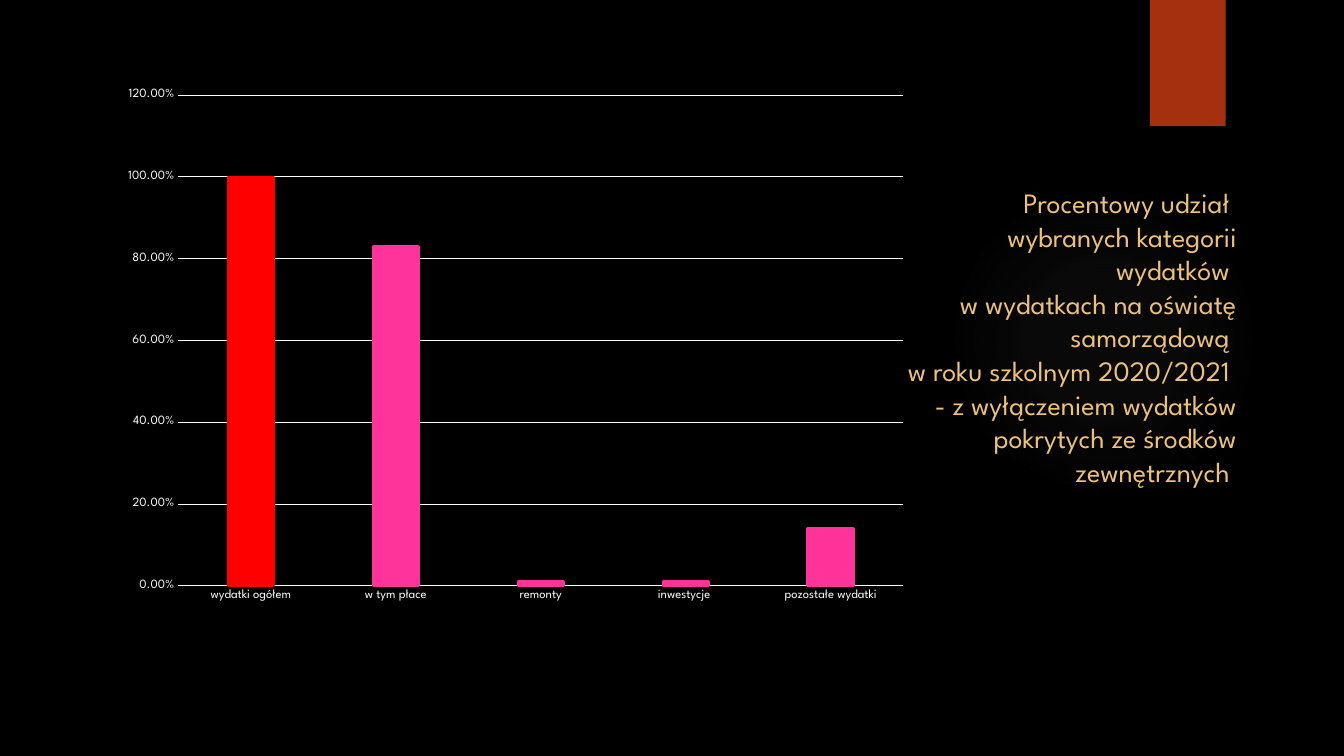
"""Build a slide charting the share of chosen categories in education spending."""
from dataclasses import dataclass

from pptx import Presentation
from pptx.chart.data import CategoryChartData
from pptx.dml.color import RGBColor
from pptx.enum.chart import XL_CHART_TYPE, XL_TICK_MARK
from pptx.enum.shapes import MSO_SHAPE
from pptx.enum.text import MSO_ANCHOR, PP_ALIGN
from pptx.oxml import parse_xml
from pptx.oxml.ns import nsdecls, qn
from pptx.util import Cm, Pt

COLUMNS = XL_CHART_TYPE.COLUMN_CLUSTERED
NO_TICK = XL_TICK_MARK.NONE
ELLIPSE = MSO_SHAPE.OVAL
RECTANGLE = MSO_SHAPE.RECTANGLE
TOP = MSO_ANCHOR.TOP
RIGHT = PP_ALIGN.RIGHT

BLACK = RGBColor(0x00, 0x00, 0x00)
WHITE = RGBColor(0xFF, 0xFF, 0xFF)
RUST = RGBColor(0xA5, 0x30, 0x0F)
GOLD = RGBColor(0xED, 0xC1, 0x7C)
RED = RGBColor(0xFF, 0x00, 0x00)
PINK = RGBColor(0xFF, 0x33, 0x99)
GREY = RGBColor(0x84, 0x84, 0x84)
FONT = "League Spartan"


@dataclass(frozen=True)
class Frame:
    left: float
    top: float
    width: float
    height: float

    def lengths(self) -> tuple:
        return Cm(self.left), Cm(self.top), Cm(self.width), Cm(self.height)


@dataclass(frozen=True)
class Spending:
    category: str
    share: float
    color: RGBColor = PINK


@dataclass(frozen=True)
class GlowStop:
    position: int
    opacity: int


GLOW_FRAME = Frame(23.9, 4.65, 7.82, 7.82)
RIBBON_FRAME = Frame(28.98, 0, 1.91, 3.18)
TITLE_FRAME = Frame(22.43, 4.55, 8.99, 11.61)
CHART_FRAME = Frame(1.52, 1.45, 21.72, 16.08)
PLOT_LAYOUT = {"x": 0.137, "y": 0.059, "w": 0.841, "h": 0.769}
GLOW_STOPS = [GlowStop(0, 7), GlowStop(36, 6), GlowStop(69, 0)]

SPENDINGS = [
    Spending("wydatki ogółem", 1, RED),
    Spending("w tym płace", 0.83),
    Spending("remonty", 0.01),
    Spending("inwestycje ", 0.01),
    Spending("pozostałe wydatki", 0.14),
]

TITLE = (
    "Procentowy udział \v"
    "wybranych kategorii wydatków \v"
    "w wydatkach na oświatę samorządową \v"
    "w roku szkolnym 2020/2021 \v"
    "- z wyłączeniem wydatków pokrytych ze środków zewnętrznych "
)


def add_plain_shape(page, kind, frame: Frame, color: RGBColor):
    shape = page.shapes.add_shape(kind, *frame.lengths())
    shape.shadow.inherit = False
    shape.fill.solid()
    shape.fill.fore_color.rgb = color
    shape.line.fill.background()
    return shape


def add_glow(page, frame: Frame, stops: list[GlowStop]) -> None:
    shape = add_plain_shape(page, ELLIPSE, frame, GREY)
    stop_xml = "".join(
        f'<a:gs pos="{stop.position * 1000}"><a:srgbClr val="{GREY}">'
        f'<a:alpha val="{stop.opacity * 1000}"/></a:srgbClr></a:gs>'
        for stop in stops
    )
    gradient = parse_xml(
        f'<a:gradFill {nsdecls("a")} rotWithShape="1"><a:gsLst>{stop_xml}</a:gsLst>'
        '<a:path path="circle"><a:fillToRect l="50000" t="50000" r="50000" b="50000"/>'
        "</a:path></a:gradFill>"
    )
    properties = shape.element.spPr
    properties.replace(properties.find(qn("a:solidFill")), gradient)


def format_font(font, *, size: float, color: RGBColor) -> None:
    font.name = FONT
    font.size = Pt(size)
    font.color.rgb = color


def add_text(page, text: str, *, frame: Frame, size: float, color: RGBColor, align) -> None:
    box = page.shapes.add_textbox(*frame.lengths())
    box.text_frame.word_wrap = True
    box.text_frame.vertical_anchor = TOP
    box.text_frame.text = text
    for para in box.text_frame.paragraphs:
        para.alignment = align
        for span in para.runs:
            format_font(span.font, size=size, color=color)


def format_line(line, color: RGBColor, width: float) -> None:
    line.color.rgb = color
    line.width = Pt(width)


def color_bar(bar, color: RGBColor) -> None:
    bar.format.fill.solid()
    bar.format.fill.fore_color.rgb = color
    format_line(bar.format.line, color, 2)


def place_plot(chart, layout: dict[str, float]) -> None:
    plot_area = chart.element.find(".//" + qn("c:plotArea"))
    for previous in plot_area.findall(qn("c:layout")):
        plot_area.remove(previous)
    modes = "".join(f'<c:{side}Mode val="edge"/>' for side in "xy")
    sizes = "".join(f'<c:{side} val="{value}"/>' for side, value in layout.items())
    plot_area.insert(0, parse_xml(
        f'<c:layout {nsdecls("c")}><c:manualLayout><c:layoutTarget val="inner"/>'
        f"{modes}{sizes}</c:manualLayout></c:layout>"
    ))


def add_spending_chart(page, frame: Frame, spendings: list[Spending]) -> None:
    data = CategoryChartData(number_format="0.00%")
    data.categories = [spending.category for spending in spendings]
    data.add_series("Series 1", [spending.share for spending in spendings])
    chart = page.shapes.add_chart(COLUMNS, *frame.lengths(), data).chart
    chart.has_legend = False
    chart.has_title = False
    format_font(chart.font, size=10, color=WHITE)
    place_plot(chart, PLOT_LAYOUT)

    plot = chart.plots[0]
    plot.vary_by_categories = False
    plot.gap_width = 219
    plot.overlap = -27
    series = plot.series[0]
    series.invert_if_negative = False
    color_bar(series, RED)
    for index, spending in enumerate(spendings):
        if spending.color != RED:
            color_bar(series.points[index], spending.color)

    for axis in (chart.category_axis, chart.value_axis):
        axis.major_tick_mark = NO_TICK
        axis.minor_tick_mark = NO_TICK
        format_font(axis.tick_labels.font, size=9, color=WHITE)
    format_line(chart.category_axis.format.line, WHITE, 0.75)
    shares = chart.value_axis
    shares.minimum_scale, shares.maximum_scale, shares.major_unit = 0, 1.2, 0.2
    shares.tick_labels.number_format = "0.00%"
    shares.tick_labels.number_format_is_linked = False
    shares.format.line.fill.background()
    format_line(shares.major_gridlines.format.line, WHITE, 0.75)


def main() -> None:
    deck = Presentation()
    deck.slide_width, deck.slide_height = Cm(33.87), Cm(19.05)
    page = deck.slides.add_slide(deck.slide_layouts[6])
    page.background.fill.solid()
    page.background.fill.fore_color.rgb = BLACK
    add_glow(page, GLOW_FRAME, GLOW_STOPS)
    add_plain_shape(page, RECTANGLE, RIBBON_FRAME, RUST)
    add_text(page, TITLE, frame=TITLE_FRAME, size=20, color=GOLD, align=RIGHT)
    add_spending_chart(page, CHART_FRAME, SPENDINGS)
    deck.save("out.pptx")


if __name__ == "__main__":
    main()
